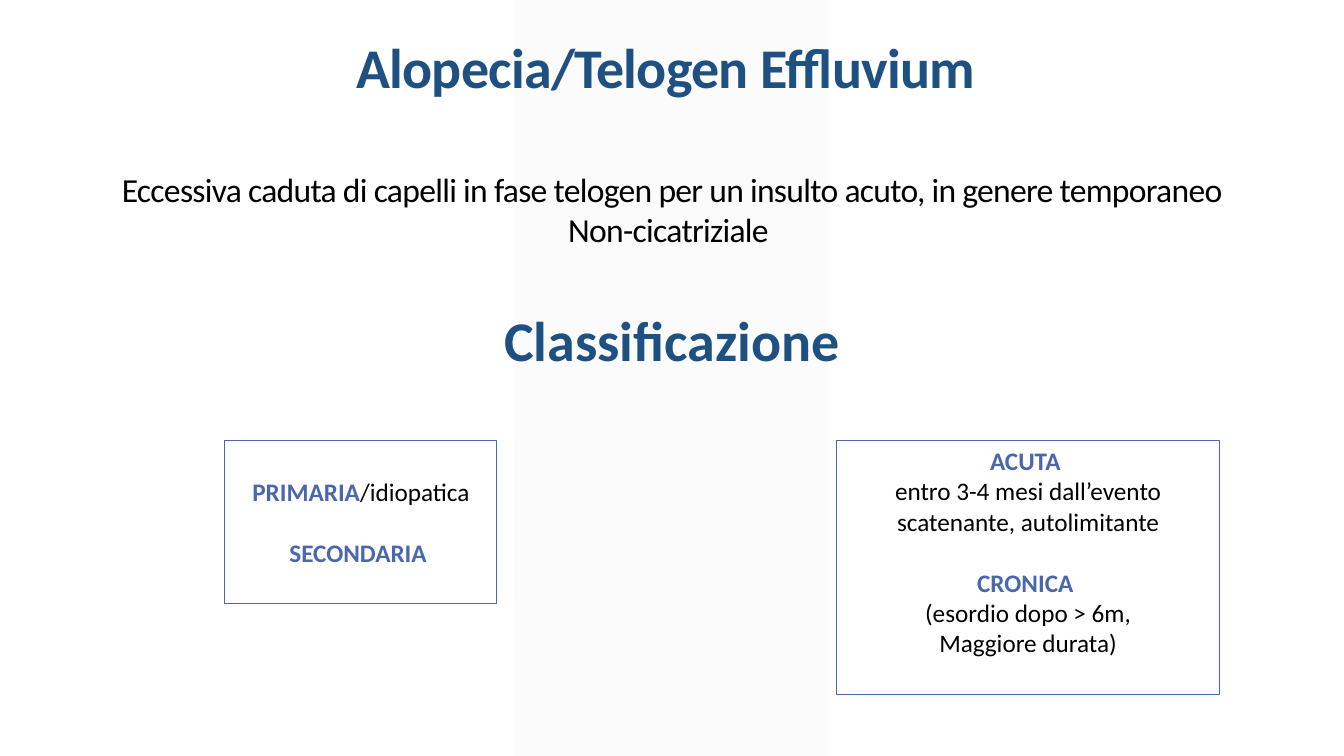
from dataclasses import dataclass

from lxml import etree
from pptx import Presentation
from pptx.dml.color import RGBColor
from pptx.enum.shapes import MSO_SHAPE
from pptx.enum.text import MSO_ANCHOR, MSO_AUTO_SIZE, PP_ALIGN
from pptx.oxml.ns import qn
from pptx.util import Pt

RECTANGLE, PARALLELOGRAM = MSO_SHAPE.RECTANGLE, MSO_SHAPE.PARALLELOGRAM
TOP, MIDDLE = MSO_ANCHOR.TOP, MSO_ANCHOR.MIDDLE
NO_FIT, CENTER = MSO_AUTO_SIZE.NONE, PP_ALIGN.CENTER

NAVY = RGBColor(0x1E, 0x50, 0x82)
BLUE = RGBColor(0x4A, 0x66, 0xAC)
BLACK = RGBColor(0x00, 0x00, 0x00)
BAND_GREY = RGBColor(0xF2, 0xF2, 0xF2)

FONT = "Calibri"
TITLE_ONLY = 5
TEXT_LEFT, TEXT_WIDTH = 25.2, 909.4
CLASS_TOP = 314.6
CLASS_GAP = 22


@dataclass(frozen=True)
class Span:
    text: str
    color: RGBColor = BLACK
    bold: bool = False
    size: float = 18
    spacing: float = 0


@dataclass(frozen=True)
class Line:
    spans: tuple[Span, ...]
    before: float = 0


@dataclass(frozen=True)
class ClassBox:
    left: float
    width: float
    height: float
    anchor: MSO_ANCHOR
    lines: tuple[Line, ...]


def place(shape, left: float, top: float, width: float, height: float) -> None:
    shape.left, shape.top = Pt(left), Pt(top)
    shape.width, shape.height = Pt(width), Pt(height)


def write(shape, lines: tuple[Line, ...], anchor: MSO_ANCHOR = TOP) -> None:
    frame = shape.text_frame
    frame.word_wrap = True
    frame.auto_size = NO_FIT
    frame.vertical_anchor = anchor
    for index, line in enumerate(lines):
        para = frame.add_paragraph() if index else frame.paragraphs[0]
        para.alignment = CENTER
        para.space_before = Pt(line.before)
        for span in line.spans:
            run = para.add_run()
            run.text = span.text
            run.font.name = FONT
            run.font.size = Pt(span.size)
            run.font.bold = span.bold
            run.font.color.rgb = span.color
            if span.spacing:
                run.font._element.set("spc", str(round(span.spacing * 100)))


def add_text(page, top: float, height: float, lines: tuple[Line, ...]) -> None:
    box = page.shapes.add_textbox(Pt(TEXT_LEFT), Pt(top), Pt(TEXT_WIDTH), Pt(height))
    write(box, lines)


def add_class_box(page, item: ClassBox) -> None:
    box = page.shapes.add_shape(
        RECTANGLE, Pt(item.left), Pt(CLASS_TOP), Pt(item.width), Pt(item.height))
    box.shadow.inherit = False
    box.fill.background()
    box.line.color.rgb = BLUE
    box.line.width = Pt(0.75)
    write(box, item.lines, item.anchor)


def add_band(page) -> None:
    band = page.shapes.add_shape(PARALLELOGRAM, Pt(367.2), Pt(0), Pt(224.6), Pt(540))
    band.adjustments[0] = 0
    band.shadow.inherit = False
    band.line.fill.background()
    band.fill.solid()
    band.fill.fore_color.rgb = BAND_GREY
    color = band._element.spPr.find(qn("a:solidFill")).find(qn("a:srgbClr"))
    etree.SubElement(color, qn("a:alpha")).set("val", "30000")
    # The band lies behind the title
    page.shapes.title._element.addprevious(band._element)


TITLE = (Line((Span("Alopecia/Telogen Effluvium ", NAVY, True, 40, -0.5),)),)
DEFINITION = (
    Line((Span("Eccessiva caduta di capelli in fase telogen per un insulto acuto, "
               "in genere temporaneo", size=24, spacing=-0.5),)),
    Line((Span("Non-cicatriziale ", size=24, spacing=-0.5),)),
)
HEADING = (Line((Span("Classificazione", NAVY, True, 40),)),)

CLASS_BOXES = (
    ClassBox(160.6, 194.4, 116.6, MIDDLE, (
        Line((Span("PRIMARIA", BLUE, True), Span("/idiopatica"))),
        Line((Span("SECONDARIA ", BLUE, True),), CLASS_GAP),
    )),
    ClassBox(597.6, 273.6, 181.8, TOP, (
        Line((Span("ACUTA ", BLUE, True),)),
        Line((Span("entro 3-4 mesi dall’evento scatenante, autolimitante"),)),
        Line((Span("CRONICA ", BLUE, True),), CLASS_GAP),
        Line((Span("(esordio dopo > 6m,"),)),
        Line((Span("Maggiore durata)"),)),
    )),
)


def main() -> None:
    deck = Presentation()
    deck.slide_width, deck.slide_height = Pt(960), Pt(540)
    page = deck.slides.add_slide(deck.slide_layouts[TITLE_ONLY])

    # Background
    add_band(page)

    # Title and definition
    place(page.shapes.title, TEXT_LEFT, 19.4, TEXT_WIDTH, 56)
    write(page.shapes.title, TITLE)
    add_text(page, 117, 65.2, DEFINITION)

    # Classification
    add_text(page, 214.6, 55.4, HEADING)
    for item in CLASS_BOXES:
        add_class_box(page, item)

    deck.save("out.pptx")


if __name__ == "__main__":
    main()
